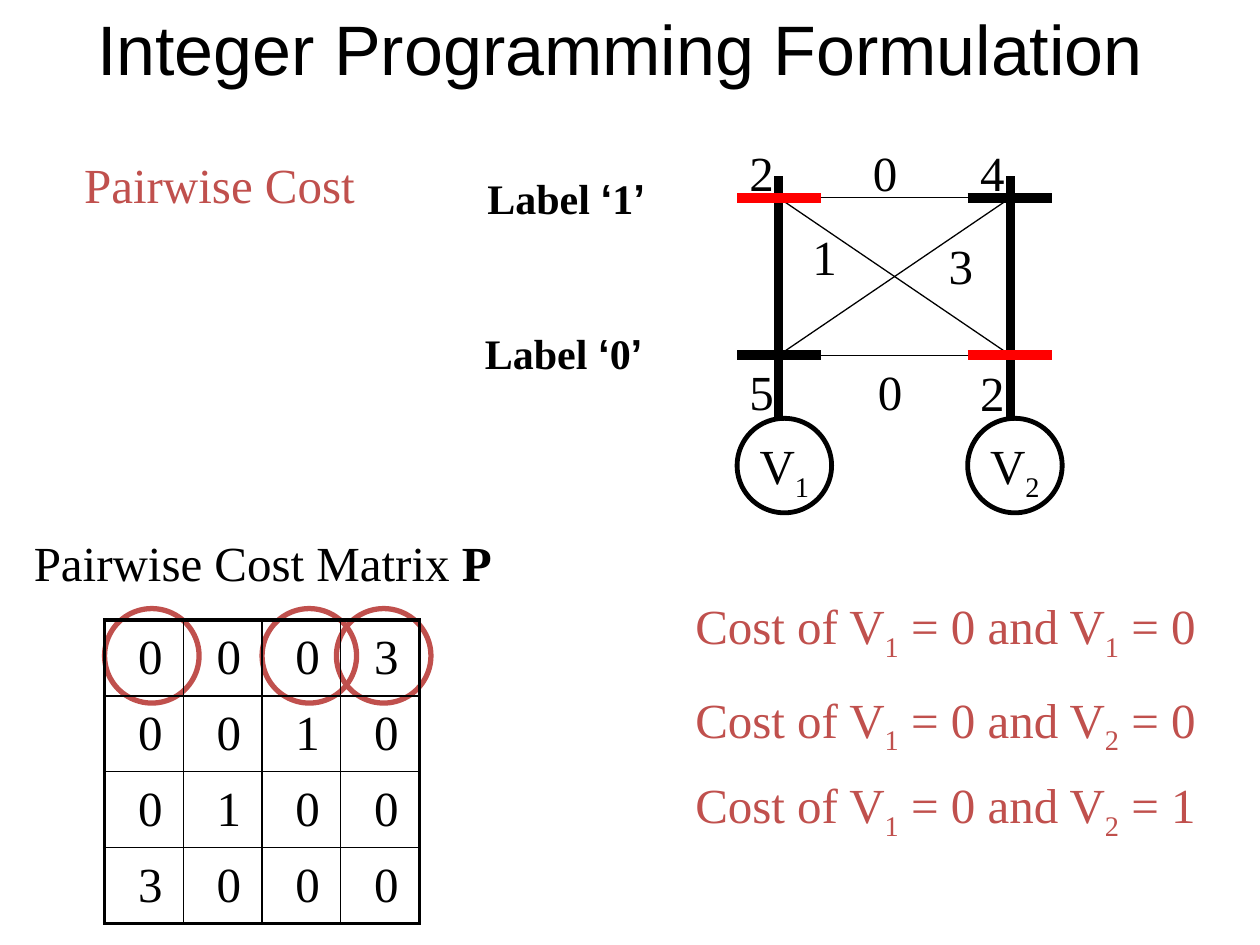
from pptx import Presentation
from pptx.dml.color import RGBColor
from pptx.enum.shapes import MSO_CONNECTOR, MSO_SHAPE
from pptx.enum.text import MSO_ANCHOR, MSO_AUTO_SIZE, PP_ALIGN
from pptx.oxml.ns import qn
from pptx.util import Inches, Pt
from lxml import etree

STRAIGHT = MSO_CONNECTOR.STRAIGHT
OVAL = MSO_SHAPE.OVAL
MIDDLE = MSO_ANCHOR.MIDDLE
CENTER = PP_ALIGN.CENTER
GROW = MSO_AUTO_SIZE.SHAPE_TO_FIT_TEXT
FIXED = MSO_AUTO_SIZE.NONE

BLACK = RGBColor(0, 0, 0)
RED = RGBColor(0xFF, 0, 0)
BRICK = RGBColor(0xC0, 0x50, 0x4D)
SERIF = "Times New Roman"
SANS = "Arial"

TOP, LOW = 1.57, 2.82
NODES = [5.85, 7.68]
POLES = [6.18, 8.02]
MATRIX = ["0003", "0010", "0100", "3000"]


def write(frame, parts, size=28, font=SERIF, color=BLACK, bold=False, align=None):
    para = frame.paragraphs[0]
    para.alignment = align
    for part in parts:
        words, style = (part, {}) if isinstance(part, str) else part
        run = para.add_run()
        run.text = words
        run.font.size = Pt(size)
        run.font.name = style.get("font", font)
        run.font.color.rgb = color
        run.font.bold = style.get("bold", bold)
        if style.get("sub"):
            run._r.get_or_add_rPr().set("baseline", "-25000")


def label(slide, parts, x, y, w=0.4, h=0.57, **form):
    box = slide.shapes.add_textbox(Inches(x), Inches(y), Inches(w), Inches(h))
    frame = box.text_frame
    frame.word_wrap = False
    frame.auto_size = GROW
    write(frame, parts, **form)


def line(slide, x1, y1, x2, y2, width=0.75, color=BLACK):
    edge = slide.shapes.add_connector(
        STRAIGHT, Inches(x1), Inches(y1), Inches(x2), Inches(y2))
    edge.line.width = Pt(width)
    edge.line.color.rgb = color
    etree.SubElement(edge._element.spPr, qn("a:effectLst"))


def ring(slide, x, y, width, color):
    oval = slide.shapes.add_shape(
        OVAL, Inches(x), Inches(y), Inches(0.75), Inches(0.75))
    oval.shadow.inherit = False
    oval.fill.background()
    oval.line.width = Pt(width)
    oval.line.color.rgb = color


def sub(digit):
    return digit, {"sub": True}


def border(cell, side, width):
    edge = etree.SubElement(
        cell._tc.get_or_add_tcPr(), qn("a:ln" + side), w=str(Pt(width)))
    fill = etree.SubElement(edge, qn("a:solidFill"))
    etree.SubElement(fill, qn("a:srgbClr"), val=str(BLACK))


def matrix(slide, x, y, w, h):
    size = len(MATRIX)
    table = slide.shapes.add_table(
        size, size, Inches(x), Inches(y), Inches(w), Inches(h)).table
    table.first_row = table.horz_banding = False
    for r, digits in enumerate(MATRIX):
        for c, digit in enumerate(digits):
            cell = table.cell(r, c)
            cell.margin_top = cell.margin_bottom = 0
            cell.margin_left, cell.margin_right = Inches(0.1), 0
            cell.vertical_anchor = MIDDLE
            write(cell.text_frame, [digit], align=CENTER)
            last = size - 1
            outer = {"L": c == 0, "R": c == last, "T": r == 0, "B": r == last}
            for side, thick in outer.items():
                border(cell, side, 2.25 if thick else 1)
            cell.fill.background()


def graph(slide):
    for i, (node, pole) in enumerate(zip(NODES, POLES), 1):
        ring(slide, node, 3.32, 2.75, BLACK)
        line(slide, pole, 1.4, pole, 3.32, 5)
        label(slide, ["V", sub(str(i))], node + 0.08, 3.41, 0.61)
    for start in (TOP, LOW):
        for end in (TOP, LOW):
            line(slide, POLES[0], start, POLES[1], end)
    costs = [("2", 5.85, 1.08), ("5", 5.85, 2.82), ("4", 7.68, 1.08),
             ("2", 7.68, 2.83), ("0", 6.83, 1.08), ("1", 6.35, 1.75),
             ("3", 7.43, 1.82), ("0", 6.87, 2.82)]
    for cost, x, y in costs:
        label(slide, [cost], x, y)
    for i, node in enumerate(NODES):
        for j, y in enumerate((TOP, LOW)):
            line(slide, node, y, node + 0.67, y, 5.5, RED if i == j else BLACK)
    for digit, x, y in [("1", 3.77, 1.32), ("0", 3.75, 2.55)]:
        parts = ["Label ", ("‘", {"font": SANS}), digit, ("’", {"font": SANS})]
        label(slide, parts, x, y, 1.61, 0.5, size=24, bold=True)


def main():
    deck = Presentation()
    deck.slide_width, deck.slide_height = Inches(10), Inches(7.5)
    slide = deck.slides.add_slide(deck.slide_layouts[5])

    title = slide.shapes.title
    title.left, title.top = Inches(0.42), Inches(0.08)
    title.width, title.height = Inches(9), Inches(0.6)
    title.text_frame.auto_size = FIXED
    title.text_frame.vertical_anchor = MIDDLE
    write(title.text_frame, ["Integer Programming Formulation"],
          size=40, font=SANS, align=CENTER)

    graph(slide)
    label(slide, ["Pairwise Cost"], 0.57, 1.18, 2.38, color=BRICK)
    label(slide, ["Pairwise Cost Matrix ", ("P", {"bold": True})],
          0.17, 4.18, 3.84)

    terms = [(0.83, 4.68, "1", "0"), (2.08, 5.42, "2", "0"),
             (2.67, 6.1, "2", "1")]
    for x, y, node, value in terms:
        ring(slide, x, 4.83, 3, BRICK)
        parts = ["Cost of V", sub("1"), " = 0 and V", sub(node), " = " + value]
        label(slide, parts, 5.42, y, 4.23, color=BRICK)
    matrix(slide, 0.83, 4.92, 2.5, 2.41)

    deck.save("out.pptx")


if __name__ == "__main__":
    main()
